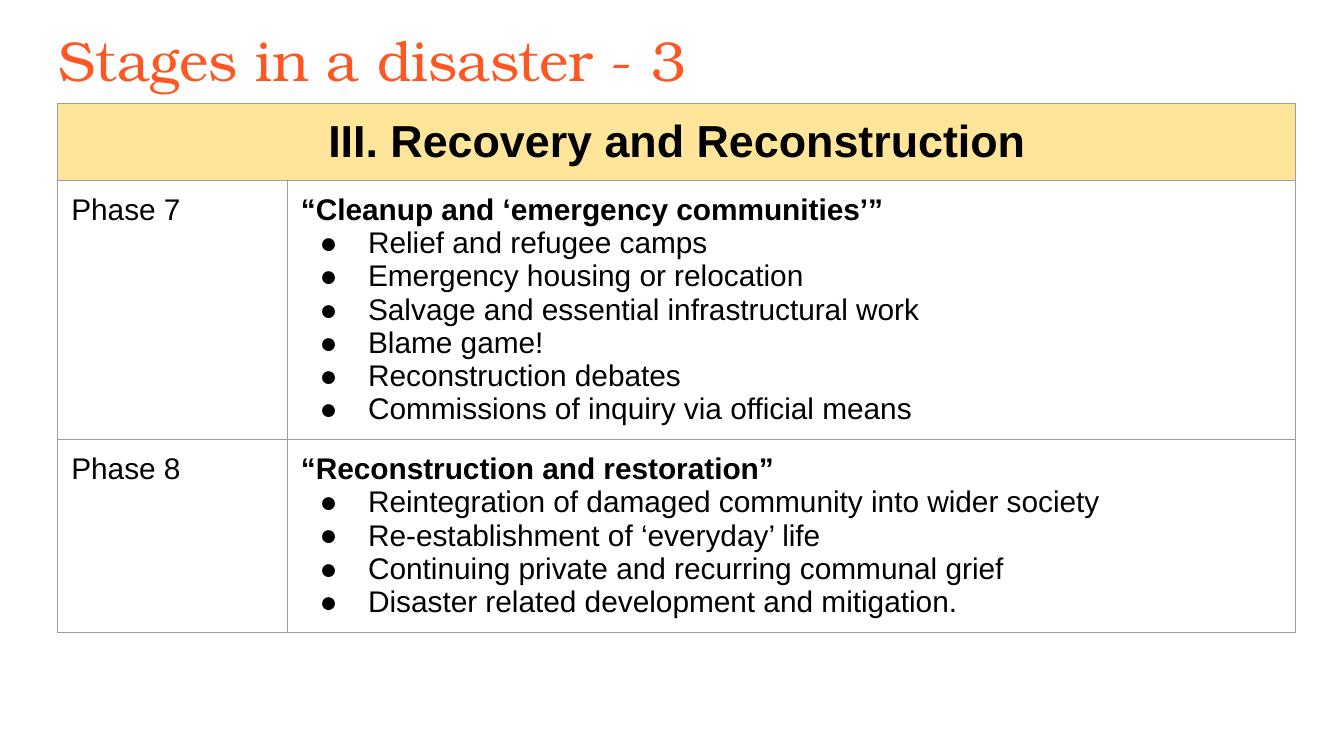
from typing import NamedTuple

from lxml.etree import SubElement
from pptx import Presentation
from pptx.dml.color import RGBColor
from pptx.enum.text import MSO_AUTO_SIZE, PP_ALIGN as Align
from pptx.oxml.ns import qn
from pptx.util import Pt

BODY_FONT = "Arial"
TITLE_FONT = "TeX Gyre Bonum"
INSET = 7.2
COLUMN_WIDTHS = (123, 540.2)
HEADER_HEIGHT = 41.2
LINE_HEIGHT = 17.76


class Phase(NamedTuple):
    label: str
    heading: str
    points: tuple[str, ...]


PHASES = (
    Phase("Phase 7", "“Cleanup and ‘emergency communities’”", (
        "Relief and refugee camps",
        "Emergency housing or relocation",
        "Salvage and essential infrastructural work",
        "Blame game!",
        "Reconstruction debates",
        "Commissions of inquiry via official means",
    )),
    Phase("Phase 8", "“Reconstruction and restoration”", (
        "Reintegration of damaged community into wider society",
        "Re-establishment of ‘everyday’ life",
        "Continuing private and recurring communal grief",
        "Disaster related development and mitigation.",
    )),
)


def color(value: str) -> RGBColor:
    return RGBColor.from_string(value)


def write(paragraph, text: str, *, size: float = 16, font: str = BODY_FONT,
          ink: str = "000000", bold: bool = False, align=Align.LEFT,
          bullet: str = "") -> None:
    paragraph.alignment = align
    run = paragraph.add_run()
    run.text = text
    run.font.size = Pt(size)
    run.font.name = font
    run.font.bold = bold
    run.font.color.rgb = color(ink)
    if bullet:
        properties = paragraph._p.get_or_add_pPr()
        properties.set("marL", str(Pt(36)))
        properties.set("indent", str(Pt(-26)))
        SubElement(properties, qn("a:buFont"), typeface=font)
        SubElement(properties, qn("a:buChar"), char=bullet)


def set_insets(holder) -> None:
    holder.margin_left = holder.margin_right = Pt(INSET)
    holder.margin_top = holder.margin_bottom = Pt(INSET)


def style_cell(cell, fill: str = "") -> None:
    set_insets(cell)
    properties = cell._tc.get_or_add_tcPr()
    for side in ("lnL", "lnR", "lnT", "lnB"):
        border = SubElement(properties, qn(f"a:{side}"), w=str(Pt(0.75)))
        paint = SubElement(border, qn("a:solidFill"))
        SubElement(paint, qn("a:srgbClr"), val="9E9E9E")
    if fill:
        cell.fill.solid()
        cell.fill.fore_color.rgb = color(fill)
    else:
        cell.fill.background()


def add_title(slide, text: str) -> None:
    title = slide.shapes.add_textbox(Pt(24.5), Pt(6.5), Pt(671), Pt(45.4)).text_frame
    title.word_wrap = True
    title.auto_size = MSO_AUTO_SIZE.NONE
    set_insets(title)
    write(title.paragraphs[0], text, size=30, font=TITLE_FONT, ink="FF5722")


def add_stage_table(slide, stage: str, phases: tuple[Phase, ...]) -> None:
    heights = [HEADER_HEIGHT] + [
        2 * INSET + LINE_HEIGHT * (1 + len(phase.points)) for phase in phases]
    table = slide.shapes.add_table(
        len(heights), len(COLUMN_WIDTHS), Pt(31), Pt(55.4),
        Pt(sum(COLUMN_WIDTHS)), Pt(sum(heights))).table
    table.first_row = table.horz_banding = False
    for column, width in zip(table.columns, COLUMN_WIDTHS):
        column.width = Pt(width)
    for row, height in zip(table.rows, heights):
        row.height = Pt(height)

    header = table.cell(0, 0)
    header.merge(table.cell(0, 1))
    for cell in table.rows[0].cells:
        style_cell(cell, "FFE599")
    write(header.text_frame.paragraphs[0], stage, size=24, bold=True, align=Align.CENTER)

    for index, phase in enumerate(phases, start=1):
        label, details = table.rows[index].cells
        style_cell(label)
        style_cell(details)
        write(label.text_frame.paragraphs[0], phase.label)
        write(details.text_frame.paragraphs[0], phase.heading, bold=True)
        for point in phase.points:
            write(details.text_frame.add_paragraph(), point, bullet="●")


def main() -> None:
    deck = Presentation()
    deck.slide_width, deck.slide_height = Pt(720), Pt(405)
    slide = deck.slides.add_slide(deck.slide_layouts[6])
    add_title(slide, "Stages in a disaster - 3")
    add_stage_table(slide, "III. Recovery and Reconstruction", PHASES)
    deck.save("out.pptx")


if __name__ == "__main__":
    main()
